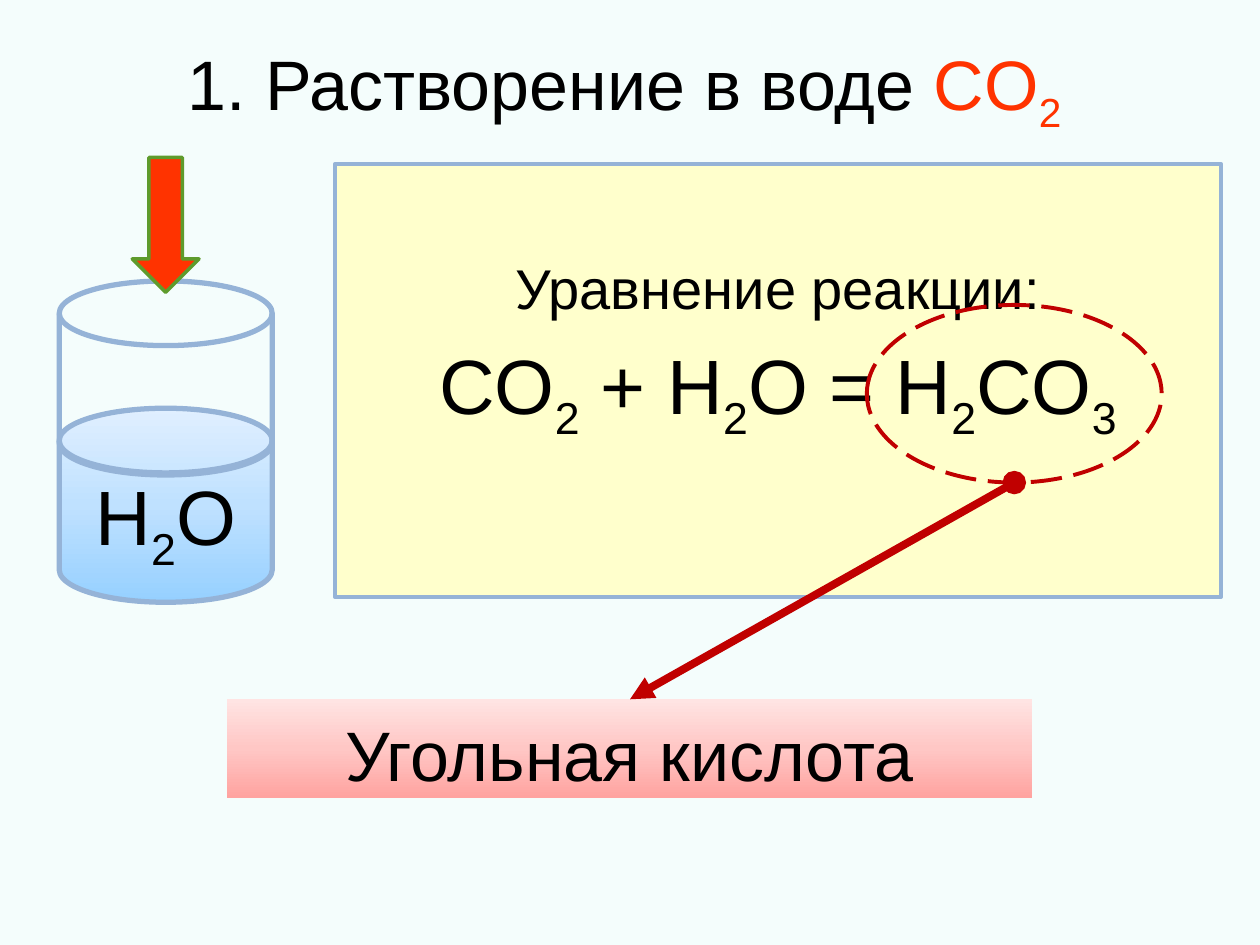
from copy import deepcopy
from pptx import Presentation
from pptx.dml.color import RGBColor
from pptx.enum.dml import MSO_LINE
from pptx.enum.shapes import MSO_CONNECTOR, MSO_SHAPE as SHAPE
from pptx.enum.text import MSO_ANCHOR as ANCHOR, MSO_AUTO_SIZE, PP_ALIGN
from pptx.oxml.ns import qn
from pptx.util import Inches, Pt
from lxml.etree import SubElement

COLS, ROWS = 100, 75
BLACK, RED, DARK_RED, BLUE = "000000", "FF3300", "C00000", "95B3D7"


def rgb(value):
    return RGBColor.from_string(value)


class Board:
    font = "Arial"

    def __init__(self, prs, background):
        self.cell_w = prs.slide_width / COLS
        self.cell_h = prs.slide_height / ROWS
        self.s = prs.slides.add_slide(prs.slide_layouts[5])
        fill = self.s.background.fill
        fill.solid()
        fill.fore_color.rgb = rgb(background)

    def grid(self, *values):
        sizes = (self.cell_w, self.cell_h)
        return [round(v * sizes[i % 2]) for i, v in enumerate(values)]

    def formula(self, p, text, size):
        p.alignment = PP_ALIGN.CENTER
        for i, piece in enumerate(text.split("|")):
            if not piece:
                continue
            r = p.add_run()
            r.text = piece
            r.font.name, r.font.size = self.font, Pt(size)
            r.font.color.rgb = rgb(BLACK)
            if i % 2:
                r.font._element.set("baseline", "-25000")

    def title(self, at, text, size, accent_from):
        sp = self.s.shapes.title
        sp.left, sp.top, sp.width, sp.height = self.grid(*at)
        tf = sp.text_frame
        tf.auto_size = MSO_AUTO_SIZE.NONE
        tf.vertical_anchor = ANCHOR.MIDDLE
        p = tf.paragraphs[0]
        self.formula(p, text, size)
        for r in p.runs[accent_from:]:
            r.font.color.rgb = rgb(RED)

    def shape(self, kind, at, fill=None, line=None, width=1, dash=None):
        sp = self.s.shapes.add_shape(kind, *self.grid(*at))
        sp.shadow.inherit = False
        if isinstance(fill, tuple):
            self.gradient(sp, fill)
        elif fill:
            sp.fill.solid()
            sp.fill.fore_color.rgb = rgb(fill)
        else:
            sp.fill.background()
        if line:
            sp.line.color.rgb = rgb(line)
            sp.line.width = Pt(width)
            if dash:
                sp.line.dash_style = dash
        else:
            sp.line.fill.background()
        return sp

    def gradient(self, sp, colours):
        sp.fill.gradient()
        sp.fill.gradient_angle = 90
        stops = sp._element.spPr.find(qn("a:gradFill")).find(qn("a:gsLst"))
        stops.insert(1, deepcopy(stops[0]))
        for i, (stop, colour) in enumerate(zip(sp.fill.gradient_stops, colours)):
            stop.position = i / 2
            stop.color.rgb = rgb(colour)

    def label(self, sp, lines, anchor=ANCHOR.MIDDLE, top=0.05, gap=0, wrap=True):
        tf = sp.text_frame
        tf.word_wrap = wrap
        tf.vertical_anchor = anchor
        tf.margin_top = Inches(top)
        for i, (text, size) in enumerate(lines):
            p = tf.add_paragraph() if i else tf.paragraphs[0]
            if i:
                p.space_before = Pt(gap)
            self.formula(p, text, size)

    def arrow(self, start, end, colour, width):
        c = self.s.shapes.add_connector(MSO_CONNECTOR.STRAIGHT, *self.grid(*start, *end))
        c.line.color.rgb = rgb(colour)
        c.line.width = Pt(width)
        ln = c._element.spPr.find(qn("a:ln"))
        SubElement(ln, qn("a:headEnd"), type="oval")
        SubElement(ln, qn("a:tailEnd"), type="triangle")
        SubElement(c._element.spPr, qn("a:effectLst"))


def main():
    prs = Presentation()
    prs.slide_width, prs.slide_height = Inches(10), Inches(7.5)
    b = Board(prs, "F4FDFC")
    b.title((5, 2.3, 90, 9.4), "1. Растворение в воде ||CO|2 ", 40, accent_from=1)

    acid = b.shape(SHAPE.RECTANGLE, (18, 55.5, 63.9, 7.8), ("FFA3A0", "FFC7C5", "FFE4E3"))
    b.label(acid, [("Угольная кислота", 40)], ANCHOR.TOP, top=0.1)

    disk = SHAPE.FLOWCHART_MAGNETIC_DISK
    water = b.shape(disk, (4.7, 32.4, 16.9, 15.4), ("96D0FF", "BFE1FF", "E0EFFF"), BLUE, 3)
    b.label(water, [("H|2|O", 44)], wrap=False)
    b.shape(disk, (4.7, 22.3, 16.9, 15.4), line=BLUE, width=3)
    b.shape(SHAPE.DOWN_ARROW, (10.5, 12.5, 5.3, 10.7), RED, "5E9B2C", 2)

    reaction = b.shape(SHAPE.RECTANGLE, (26.6, 13, 70.3, 34.4), "FFFFCC", BLUE, 2.25)
    b.label(reaction, [("Уравнение реакции:", 32), ("CO|2| + H|2|O = H|2|CO|3", 44)],
            ANCHOR.TOP, top=0.71, gap=10)
    b.shape(SHAPE.FLOWCHART_CONNECTOR, (68.8, 24.2, 23.4, 14.1),
            line=DARK_RED, width=2.25, dash=MSO_LINE.LONG_DASH)
    b.arrow((80.5, 38.3), (50, 55.5), DARK_RED, 4.5)
    prs.save("out.pptx")


if __name__ == "__main__":
    main()
